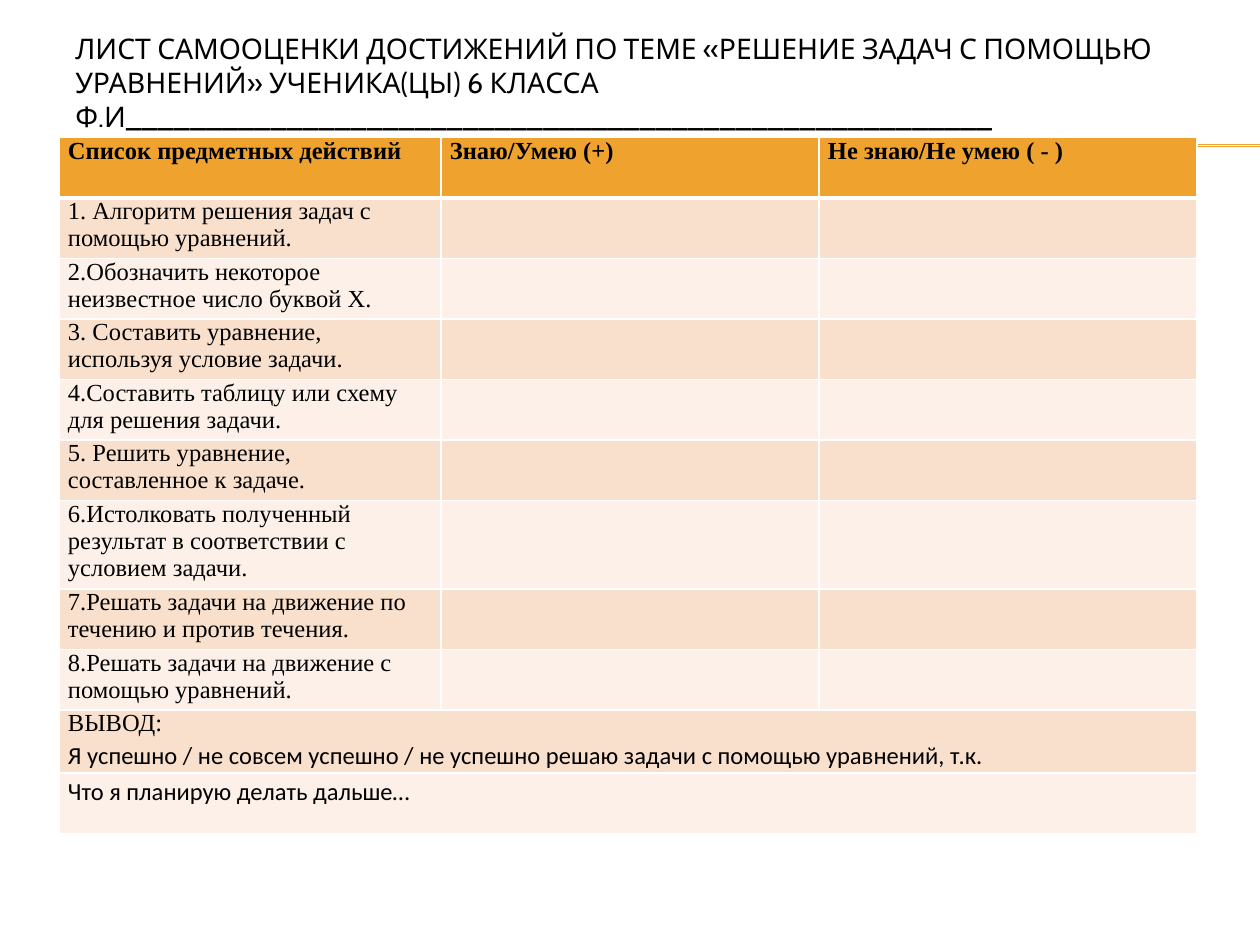
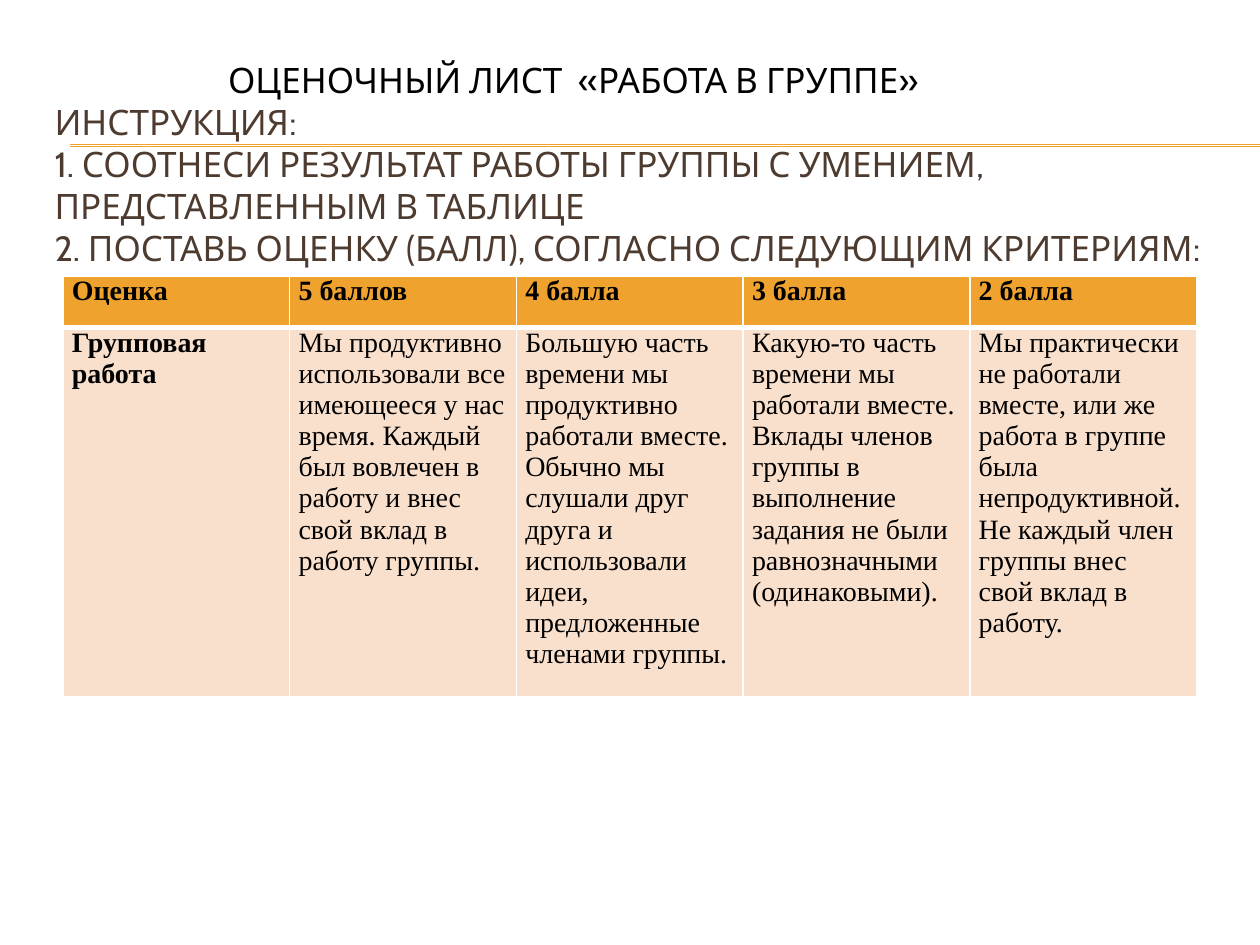
"""Build two self-assessment sheets for a sixth-grade mathematics lesson."""
from lxml.etree import SubElement
from pptx import Presentation
from pptx.dml.color import RGBColor
from pptx.enum.shapes import MSO_CONNECTOR as Connector
from pptx.oxml.ns import qn
from pptx.util import Cm, Pt

ORANGE, PEACH, CREAM = "F0A22E", "F9E0CD", "FCF0E8"
BLACK, BROWN, WHITE = "000000", "4E3B30", "FFFFFF"
TITLE_FONT, TABLE_FONT, NOTE_FONT = "Cabin", "Times New Roman", "Calibri"
RULE_LEFT, RULE_TOPS, SLIDE_WIDTH, SLIDE_HEIGHT = 1.42, (2.92, 2.95), 25.4, 19.05
BORDER, HEADER_BORDER = 1, 3

SHEETS = [
    {
        "title": [
            ("ЛИСТ САМООЦЕНКИ ДОСТИЖЕНИЙ ПО ТЕМЕ «РЕШЕНИЕ ЗАДАЧ С ПОМОЩЬЮ УРАВНЕНИЙ» "
             "УЧЕНИКА(ЦЫ) 6 КЛАССА Ф.И" + "_" * 54, BLACK, 0),
        ],
        "title_box": (1.27, 0.63, 22.86, 2.1),
        "title_size": 16.2,
        "table_at": (1.19, 2.77),
        "columns": [7.7, 7.62, 7.62],
        "heights": [1.22] * 6 + [1.65] + [1.22] * 4,
        "size": 14,
        "bold_first_column": False,
        "rows": [
            ["Список предметных действий", "Знаю/Умею (+)", "Не знаю/Не умею ( - )"],
            ["1. Алгоритм решения задач с помощью уравнений."],
            ["2.Обозначить некоторое неизвестное число буквой Х."],
            ["3. Составить уравнение, используя условие задачи."],
            ["4.Составить таблицу или схему для решения задачи."],
            ["5. Решить уравнение, составленное к задаче."],
            ["6.Истолковать полученный результат в соответствии с условием задачи."],
            ["7.Решать задачи на движение по течению и против течения."],
            ["8.Решать задачи на движение с помощью уравнений."],
        ],
        "conclusions": [
            [("ВЫВОД:", TABLE_FONT, 1),
             ("Я успешно / не совсем успешно / не успешно решаю задачи "
              "с помощью уравнений, т.к.", NOTE_FONT, 1.15)],
            [("Что я планирую делать дальше…", NOTE_FONT, 1.15)],
        ],
    },
    {
        "title": [
            ("ОЦЕНОЧНЫЙ ЛИСТ  «РАБОТА В ГРУППЕ»", BLACK, 3.5),
            ("ИНСТРУКЦИЯ:", BROWN, 0),
            ("1. СООТНЕСИ РЕЗУЛЬТАТ РАБОТЫ ГРУППЫ С УМЕНИЕМ, ПРЕДСТАВЛЕННЫМ В ТАБЛИЦЕ",
             BROWN, 0),
            ("2. ПОСТАВЬ ОЦЕНКУ (БАЛЛ), СОГЛАСНО СЛЕДУЮЩИМ КРИТЕРИЯМ:", BROWN, 0),
        ],
        "title_box": (0.85, 1.18, 24.13, 4.25),
        "title_size": 20,
        "table_at": (1.27, 5.56),
        "columns": [4.57] * 5,
        "heights": [1.04, 6.85],
        "size": 16,
        "bold_first_column": True,
        "rows": [
            ["Оценка", "5 баллов", "4 балла", "3 балла", "2 балла"],
            [
                "Групповая работа",
                "Мы продуктивно использовали все имеющееся у нас время. "
                "Каждый был вовлечен в работу и внес свой вклад в работу группы.",
                "Большую часть времени мы продуктивно работали вместе. Обычно мы слушали "
                "друг друга и использовали идеи, предложенные членами группы.",
                "Какую-то часть времени мы работали вместе. Вклады членов группы "
                "в выполнение задания не были равнозначными (одинаковыми).",
                "Мы практически не работали вместе, или же работа в группе была "
                "непродуктивной. Не каждый член группы внес свой вклад в работу.",
            ],
        ],
        "conclusions": [],
    },
]


def color(value):
    return RGBColor.from_string(value)


def format_runs(paragraph, font_name, size, font_color, bold=False):
    for run in paragraph.runs:
        run.font.name = font_name
        run.font.size = Pt(size)
        run.font.bold = bold
        run.font.color.rgb = color(font_color)


def add_rules(slide):
    for top in RULE_TOPS:
        rule = slide.shapes.add_connector(
            Connector.STRAIGHT, Cm(RULE_LEFT), Cm(top), Cm(SLIDE_WIDTH), Cm(top))
        rule.line.color.rgb = color(ORANGE)
        rule.line.width = Pt(0.75)
        SubElement(rule._element.spPr, qn("a:effectLst"))


def add_title(slide, lines, box, size):
    frame = slide.shapes.add_textbox(*map(Cm, box)).text_frame
    frame.word_wrap = True
    frame.margin_top = frame.margin_bottom = 0
    frame.text = "\n".join(text for text, _, _ in lines)
    for paragraph, (_, font_color, indent) in zip(frame.paragraphs, lines):
        paragraph.line_spacing = Pt(round(size * 1.2, 1))
        paragraph._p.get_or_add_pPr().set("marL", str(Cm(indent)))
        format_runs(paragraph, TITLE_FONT, size, font_color)


def style_cell(cell, row):
    properties = cell._tc.get_or_add_tcPr()
    widths = {
        "L": BORDER,
        "R": BORDER,
        "T": HEADER_BORDER if row == 1 else BORDER,
        "B": HEADER_BORDER if row == 0 else BORDER,
    }
    for side, width in widths.items():
        line = SubElement(properties, qn(f"a:ln{side}"), w=str(Pt(width)))
        fill = SubElement(line, qn("a:solidFill"))
        SubElement(fill, qn("a:srgbClr"), val=WHITE)
    cell.fill.solid()
    cell.fill.fore_color.rgb = color(ORANGE if row == 0 else PEACH if row % 2 else CREAM)
    cell.margin_left = cell.margin_right = Cm(0.18)
    cell.margin_top = cell.margin_bottom = 0


def add_table(slide, sheet):
    columns, heights, rows = sheet["columns"], sheet["heights"], sheet["rows"]
    left, top = sheet["table_at"]
    table = slide.shapes.add_table(
        len(heights), len(columns), Cm(left), Cm(top),
        Cm(sum(columns)), Cm(sum(heights))).table
    for column, width in zip(table.columns, columns):
        column.width = Cm(width)
    for index, height in enumerate(heights):
        table.rows[index].height = Cm(height)
        for cell in table.rows[index].cells:
            style_cell(cell, index)
    for row, texts in enumerate(rows):
        for column, text in enumerate(texts):
            cell = table.cell(row, column)
            cell.text_frame.text = text
            bold = row == 0 or (column == 0 and sheet["bold_first_column"])
            format_runs(cell.text_frame.paragraphs[0], TABLE_FONT, sheet["size"], BLACK, bold)
    for row, lines in enumerate(sheet["conclusions"], len(rows)):
        cell = table.cell(row, 0)
        cell.merge(table.cell(row, len(columns) - 1))
        cell.text_frame.text = "\n".join(text for text, _, _ in lines)
        for paragraph, (_, font_name, spacing) in zip(cell.text_frame.paragraphs, lines):
            paragraph.line_spacing = float(spacing)
            format_runs(paragraph, font_name, sheet["size"], BLACK)


def main():
    presentation = Presentation()
    presentation.slide_width, presentation.slide_height = Cm(SLIDE_WIDTH), Cm(SLIDE_HEIGHT)
    for sheet in SHEETS:
        slide = presentation.slides.add_slide(presentation.slide_layouts[6])
        add_rules(slide)
        add_title(slide, sheet["title"], sheet["title_box"], sheet["title_size"])
        add_table(slide, sheet)
    presentation.save("out.pptx")


if __name__ == "__main__":
    main()
